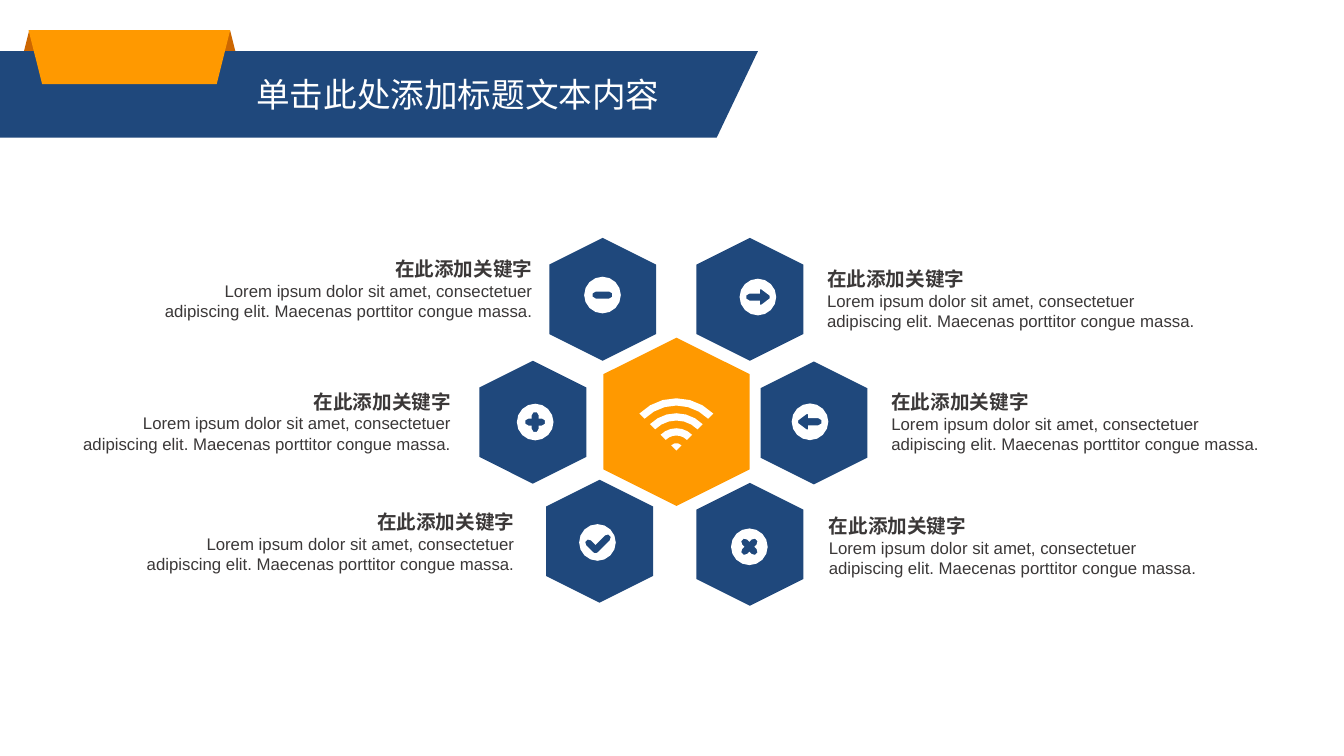
from dataclasses import dataclass
from math import cos, radians, sin

from pptx import Presentation
from pptx.dml.color import RGBColor
from pptx.enum import shapes, text
from pptx.util import Pt


@dataclass(frozen=True)
class Theme:
    navy: RGBColor = RGBColor(0x1F, 0x48, 0x7C)
    orange: RGBColor = RGBColor(0xFF, 0x99, 0x00)
    fold: RGBColor = RGBColor(0xCC, 0x66, 0x00)
    white: RGBColor = RGBColor(0xFF, 0xFF, 0xFF)
    ink: RGBColor = RGBColor(0x3B, 0x38, 0x38)
    font: str = "Arial"
    title: int = 24
    keyword: int = 14
    body: int = 12


THEME = Theme()
STROKE = 2.5  # half the thickness of an icon's strokes
DISC = 13.1  # radius of an icon's disc
KEYWORD = "在此添加关键字"
BODY = "Lorem ipsum dolor sit amet, consectetuer adipiscing elit. Maecenas porttitor congue massa."

HEXAGON_CENTERS = [
    (535.6, 213.8), (430.5, 213.8), (581.4, 302.1),
    (535.6, 388.8), (428.3, 386.6), (380.6, 301.6),
]

# centre, glyph, turn in degrees
ICONS = [
    ((382.3, 301.5), "plus", 0),
    ((535.3, 390.6), "plus", 45),
    ((426.8, 387.5), "check", 0),
    ((541.4, 212.2), "arrow", 0),
    ((578.6, 301.3), "arrow", 180),
    ((430.4, 210.8), "minus", 0),
]

# left, top, alignment
LEFT, RIGHT = text.PP_ALIGN.LEFT, text.PP_ALIGN.RIGHT
CAPTIONS = [
    (106.9, 178.6, RIGHT), (48.6, 273.5, RIGHT), (94, 359.8, RIGHT),
    (627.3, 274, LEFT), (581.4, 185.8, LEFT), (582.6, 362.2, LEFT),
]


# Outlines, as lists of points
def arc(x, y, radius, start, end, steps):
    angles = [radians(start + (end - start) * i / steps) for i in range(steps + 1)]
    return [(x + radius * cos(a), y + radius * sin(a)) for a in angles]


def cap(x, y, direction, spread=90):
    return arc(x, y, STROKE, direction - spread, direction + spread, 3)


def turn(points, degrees):
    c, s = cos(radians(degrees)), sin(radians(degrees))
    return [(x * c - y * s, x * s + y * c) for x, y in points]


def plus_outline():
    arm = [(STROKE, -STROKE)] + cap(4.8, 0, 0)
    return [point for angle in range(0, 360, 90) for point in turn(arm, angle)]


GLYPHS = {
    "minus": cap(4.8, 0, 0) + cap(-4.8, 0, 180),
    "plus": plus_outline(),
    "check": cap(-6.3, 0.3, 225) + [(-1.4, 1.7)] + cap(7.1, -3.3, -45) + cap(-1.4, 5.2, 90, 45),
    "arrow": cap(-6, 0, 180) + [
        (1.4, -STROKE), (1.4, -5.4), (2.6, -5.4), (8.4, -1),
        (8.4, 1), (2.6, 5.4), (1.4, 5.4), (1.4, STROKE)],
}


# Elements
def paint(shape, color):
    shape.shadow.inherit = False
    shape.fill.solid()
    shape.fill.fore_color.rgb = color
    shape.line.fill.background()


def add_outline(slide, contours, color, origin=(0, 0)):
    contours = [[(Pt(origin[0] + x), Pt(origin[1] + y)) for x, y in contour]
                for contour in contours]
    builder = slide.shapes.build_freeform(*contours[0][0], scale=1.0)
    builder.add_line_segments(contours[0][1:], close=True)
    for contour in contours[1:]:
        builder.move_to(*contour[0])
        builder.add_line_segments(contour[1:], close=True)
    paint(builder.convert_to_shape(), color)


def add_preset(slide, kind, left, top, width, height, color, rotation=0):
    shape = slide.shapes.add_shape(kind, Pt(left), Pt(top), Pt(width), Pt(height))
    shape.rotation = rotation
    paint(shape, color)


def add_hexagon(slide, center, width, height, color):
    add_preset(slide, shapes.MSO_SHAPE.HEXAGON, center[0] - width / 2,
               center[1] - height / 2, width, height, color, 90)


def add_icon(slide, center, name, degrees):
    disc = arc(0, 0, DISC, 0, 337.5, 15)
    add_outline(slide, [disc, turn(GLYPHS[name], degrees)], THEME.white, center)


def add_wifi(slide, center):
    bands = [arc(0, 0, outer, 225, 315, 6) + arc(0, 0, outer - 5.2, 315, 225, 6)
             for outer in (37.3, 26.6, 15.9)]
    tip = [(0, 0)] + arc(0, 0, 5.2, 225, 315, 3)
    add_outline(slide, bands + [tip], THEME.white, center)


def add_text(slide, left, top, width, height, lines, color, align=None, wrap=True):
    box = slide.shapes.add_textbox(Pt(left), Pt(top), Pt(width), Pt(height))
    frame = box.text_frame
    frame.word_wrap = wrap
    frame.auto_size = text.MSO_AUTO_SIZE.SHAPE_TO_FIT_TEXT
    frame.margin_left = frame.margin_right = Pt(9.4)
    frame.margin_top = frame.margin_bottom = Pt(4.8)
    for index, (content, size, bold) in enumerate(lines):
        paragraph = frame.add_paragraph() if index else frame.paragraphs[0]
        paragraph.text = content
        paragraph.alignment = align
        paragraph.font.name = THEME.font
        paragraph.font.size = Pt(size)
        paragraph.font.bold = bold
        paragraph.font.color.rgb = color


def add_banner(slide):
    trapezoid = shapes.MSO_SHAPE.TRAPEZOID
    add_preset(slide, trapezoid, 11.3, 22, 162.7, 38, THEME.fold)
    add_outline(slide, [[(0, 36.5), (541.4, 36.5), (512, 98.2), (0, 98.2)]], THEME.navy)
    add_preset(slide, trapezoid, 20.4, 21.5, 144, 38.6, THEME.orange, 180)
    add_text(slide, 173.7, 47.9, 310.3, 38.9,
             [("单击此处添加标题文本内容", THEME.title, False)], THEME.white, wrap=False)


def add_caption(slide, left, top, align):
    lines = [(KEYWORD, THEME.keyword, True), (BODY, THEME.body, False)]
    add_text(slide, left, top, 283, 55.4, lines, THEME.ink, align)


def main():
    presentation = Presentation()
    presentation.slide_width, presentation.slide_height = Pt(960), Pt(540)
    slide = presentation.slides.add_slide(presentation.slide_layouts[6])

    # Title banner
    add_banner(slide)

    # Ring of hexagons around the centre
    for center in HEXAGON_CENTERS:
        add_hexagon(slide, center, 87.8, 76.3, THEME.navy)
    add_hexagon(slide, (483.2, 301.3), 120.2, 104.4, THEME.orange)

    # Icons
    add_wifi(slide, (483.1, 321.8))
    for icon in ICONS:
        add_icon(slide, *icon)

    # Captions
    for caption in CAPTIONS:
        add_caption(slide, *caption)

    presentation.save("out.pptx")


if __name__ == "__main__":
    main()
